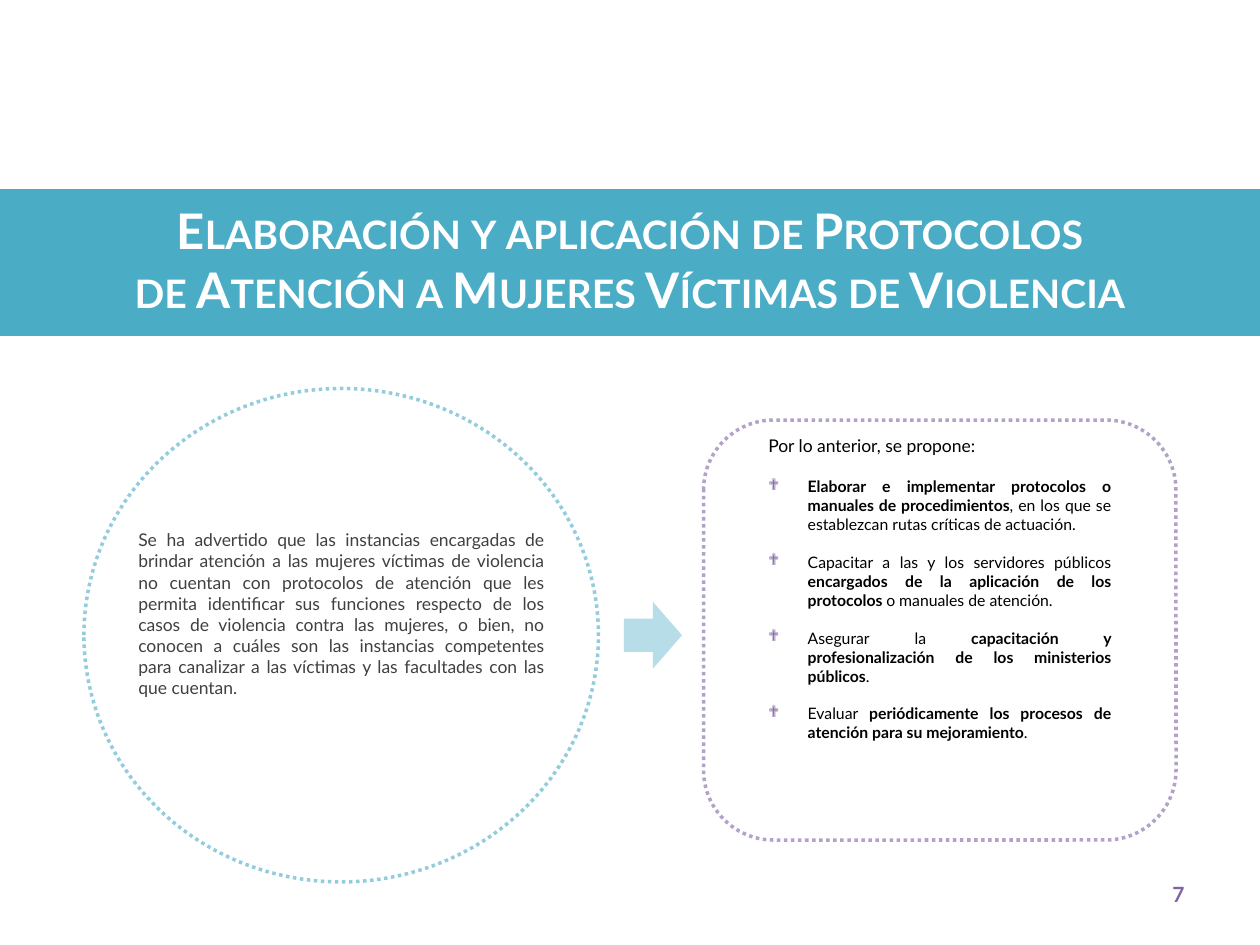
from lxml.etree import SubElement
from pptx import Presentation
from pptx.dml.color import RGBColor
from pptx.enum.dml import MSO_LINE as Dash
from pptx.enum.shapes import MSO_SHAPE as Kind
from pptx.enum.text import MSO_ANCHOR as Anchor, MSO_AUTO_SIZE as Auto, PP_ALIGN as Align
from pptx.oxml.ns import qn
from pptx.util import Pt

FONT = "Lato"
TEAL, PURPLE, WHITE, BLACK = "4BACC6", "8064A2", "FFFFFF", "000000"

TITLE = ["Elaboración y aplicación de Protocolos",
         "de Atención a Mujeres Víctimas de Violencia"]
ISSUE = ("Se ha advertido que las instancias encargadas de brindar atención a las "
         "mujeres víctimas de violencia no cuentan con protocolos de atención que les "
         "permita identificar sus funciones respecto de los casos de violencia contra "
         "las mujeres, o bien, no conocen a cuáles son las instancias competentes para "
         "canalizar a las víctimas y las facultades con las que cuentan.")
LEAD = "Por lo anterior, se propone:"
# Each item: plain start, bold middle, plain end
ITEMS = [
    ("", "Elaborar e implementar protocolos o manuales de procedimientos",
     ", en los que se establezcan rutas críticas de actuación."),
    ("Capacitar a las y los servidores públicos ",
     "encargados de la aplicación de los protocolos ", "o manuales de atención."),
    ("Asegurar la ",
     "capacitación y profesionalización de los ministerios públicos", "."),
    ("Evaluar ",
     "periódicamente los procesos de atención para su mejoramiento", "."),
]


def rgb(code):
    return RGBColor.from_string(code)


def style(run, size, color, bold=False):
    font = run.font
    font.name, font.size, font.bold = FONT, Pt(size), bold
    font.color.rgb = rgb(color)


def add_form(slide, kind, box, fill, line=None):
    form = slide.shapes.add_shape(kind, *map(Pt, box))
    form.shadow.inherit = False
    form.fill.solid()
    form.fill.fore_color.rgb = rgb(fill)
    if line:
        form.line.color.rgb = rgb(line)
        form.line.width = Pt(2)
        form.line.dash_style = Dash.ROUND_DOT
    else:
        form.line.fill.background()
    return form


def add_text(slide, box, text, size, color, align, bold=False):
    frame = slide.shapes.add_textbox(*map(Pt, box)).text_frame
    frame.word_wrap = True
    frame.text = text
    para = frame.paragraphs[0]
    para.alignment = align
    style(para.runs[0], size, color, bold)
    return frame


def add_item(frame, parts, gap):
    para = frame.add_paragraph()
    para.alignment = Align.JUSTIFY
    para.space_before = Pt(gap)
    props = para._p.get_or_add_pPr()
    props.set("marL", str(Pt(22.5)))
    props.set("indent", str(-Pt(22.5)))
    tint = SubElement(props, qn("a:buClr"))
    SubElement(tint, qn("a:srgbClr"), val=PURPLE)
    SubElement(props, qn("a:buFont"), typeface="Wingdings")
    SubElement(props, qn("a:buChar"), char="❖")
    for part, bold in zip(parts, (False, True, False)):
        if part:
            run = para.add_run()
            run.text = part
            style(run, 9, BLACK, bold)


def set_title(slide, box):
    title = slide.shapes.title
    title.left, title.top, title.width, title.height = map(Pt, box)
    slide.shapes._spTree.append(title._element)
    frame = title.text_frame
    frame.text = "\n".join(TITLE)
    frame.word_wrap = True
    frame.auto_size = Auto.NONE
    frame.vertical_anchor = Anchor.TOP
    for para in frame.paragraphs:
        para.alignment = Align.CENTER
        run = para.runs[0]
        style(run, 28, WHITE, True)
        run._r.get_or_add_rPr().set("cap", "small")


def main():
    deck = Presentation()
    deck.slide_width, deck.slide_height = Pt(720), Pt(540)
    slide = deck.slides.add_slide(deck.slide_layouts[5])

    add_form(slide, Kind.RECTANGLE, (0, 108, 720, 84), TEAL)
    set_title(slide, (0, 111, 720, 75))

    add_form(slide, Kind.OVAL, (48, 222, 294, 282), WHITE, "93CDDD")
    arrow = add_form(slide, Kind.DOWN_ARROW, (354, 346.4, 38.2, 33.2), "B7DEE8")
    arrow.rotation = 270
    add_form(slide, Kind.ROUNDED_RECTANGLE, (402, 240, 270, 240), WHITE, "B3A2C7")

    add_text(slide, (72, 299, 246, 104), ISSUE, 10, "404040", Align.JUSTIFY)
    plan = add_text(slide, (432, 245, 210, 196), LEAD, 10, BLACK, Align.JUSTIFY)
    for rank, parts in enumerate(ITEMS):
        add_item(plan, parts, 10.8 if rank else 12)
    add_text(slide, (516, 500, 168, 29), "7", 12, PURPLE, Align.RIGHT, True)

    deck.save("out.pptx")


if __name__ == "__main__":
    main()
